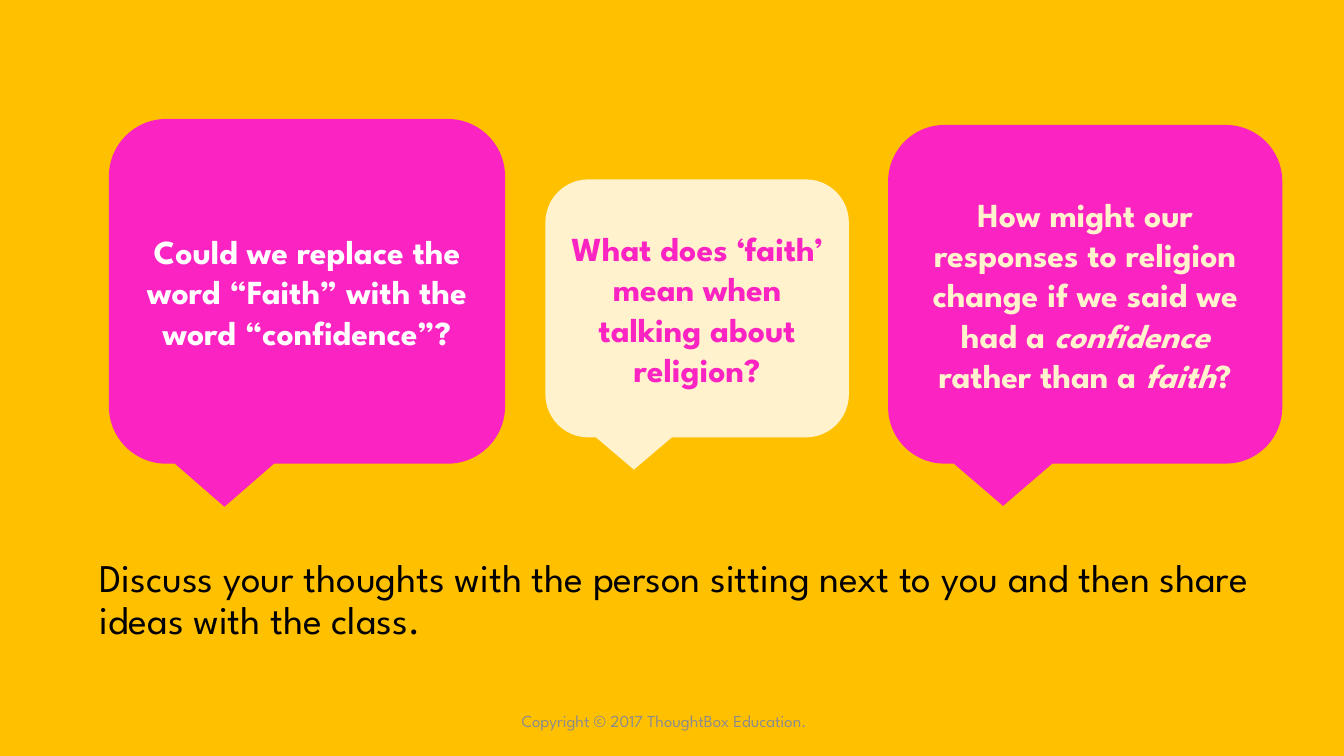
from pptx import Presentation
from pptx.dml.color import RGBColor
from pptx.enum.shapes import MSO_SHAPE as Shape
from pptx.enum.text import MSO_ANCHOR as Anchor, PP_ALIGN as Align
from pptx.util import Inches, Pt

THEME = {
    "font": "League Spartan",
    "amber": RGBColor.from_string("FFC000"),
    "pink": RGBColor.from_string("FB23C2"),
    "cream": RGBColor.from_string("FFF2CC"),
    "white": RGBColor.from_string("FFFFFF"),
    "black": RGBColor.from_string("000000"),
    "grey": RGBColor.from_string("8C8C8C"),
    "task_size": Pt(28),
    "question_size": Pt(24),
    "footer_size": Pt(12),
}

presentation = Presentation()
presentation.slide_width = Inches(13.33)
presentation.slide_height = Inches(7.5)
slide = presentation.slides.add_slide(presentation.slide_layouts[6])
slide.background.fill.solid()
slide.background.fill.fore_color.rgb = THEME["amber"]


def place(left, top, width, height):
    """Turn percentages of the slide's size into lengths."""
    column = presentation.slide_width / 100
    row = presentation.slide_height / 100
    return (round(left * column), round(top * row),
            round(width * column), round(height * row))


def write(shape, *runs, size, color, bold=False, align=Align.CENTER,
          anchor=Anchor.MIDDLE, line_spacing=1.0):
    """Fill a shape with one paragraph; every second run is italic."""
    frame = shape.text_frame
    frame.word_wrap = True
    frame.vertical_anchor = anchor
    paragraph = frame.paragraphs[0]
    paragraph.alignment = align
    paragraph.line_spacing = line_spacing
    for index, text in enumerate(runs):
        run = paragraph.add_run()
        run.text = text
        run.font.name = THEME["font"]
        run.font.size = THEME[size]
        run.font.color.rgb = THEME[color]
        run.font.bold = bold
        run.font.italic = index % 2 == 1


# Task for the class
task = slide.shapes.add_textbox(*place(6.68, 73.2, 88.73, 17.2))
write(task, "Discuss your thoughts with the person sitting next to you "
      "and then share ideas with the class.", size="task_size", color="black",
      align=Align.LEFT, anchor=Anchor.TOP, line_spacing=0.9)

# Footer
footer = slide.shapes.add_textbox(*place(32.55, 92.67, 33.75, 5.33))
write(footer, "Copyright © 2017 ThoughtBox Education.",
      size="footer_size", color="grey")

# Speech bubbles: area, fill, text colour, runs
questions = [
    ((8.1, 15.73, 29.48, 45.6), "pink", "white",
     ["Could we replace the word “Faith” with the word “confidence”?"]),
    ((40.58, 23.73, 22.58, 34.13), "cream", "pink",
     ["What does ‘faith’ mean when talking about religion?"]),
    ((66.08, 16.53, 29.33, 44.8), "pink", "cream",
     ["How might our responses to religion change if we said we had a ",
      "confidence ", "rather than a ", "faith", "?"]),
]
for area, fill, color, runs in questions:
    bubble = slide.shapes.add_shape(Shape.ROUNDED_RECTANGULAR_CALLOUT, *place(*area))
    bubble.shadow.inherit = False
    bubble.fill.solid()
    bubble.fill.fore_color.rgb = THEME[fill]
    bubble.line.fill.background()
    write(bubble, *runs, size="question_size", color=color, bold=True)

presentation.save("out.pptx")
